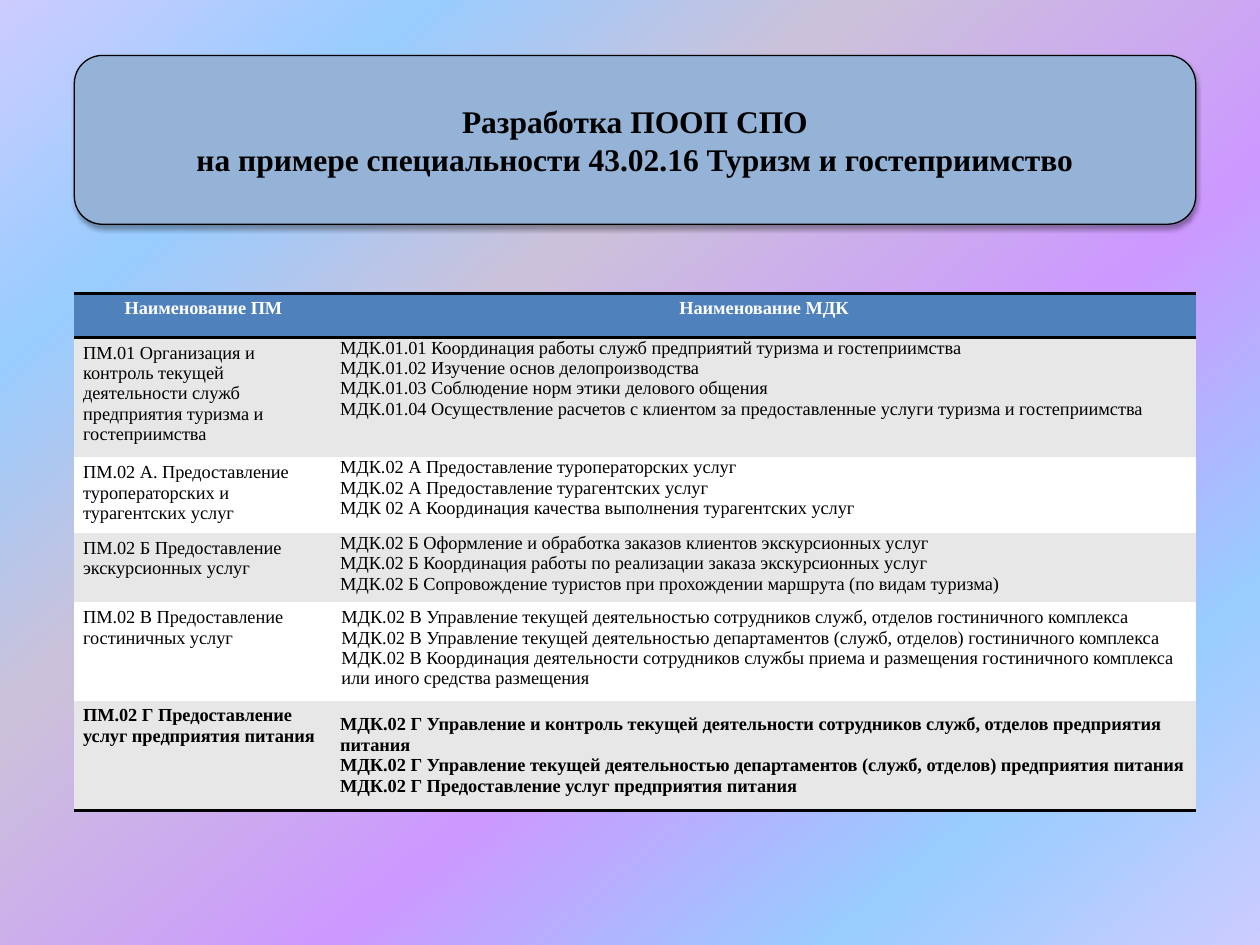
from dataclasses import dataclass

from lxml import etree
from pptx import Presentation
from pptx.dml.color import RGBColor
from pptx.enum import shapes, text
from pptx.oxml import ns, parse_xml
from pptx.util import Inches, Pt


@dataclass(frozen=True)
class Theme:
    font: str = "Times New Roman"
    title: float = 18
    body: float = 10.5
    ink: str = "000000"
    panel: str = "95B3D7"
    head: str = "4F81BD"
    band: str = "E7E7E7"
    white: str = "FFFFFF"
    wash: tuple = ((0, "CCCCFF"), (18, "99CCFF"), (36, "CCC1DA"),
                   (61, "CC99FF"), (82, "99CCFF"), (100, "CCCCFF"))


THEME = Theme()
NO_STYLE = "{2D5ABB26-0587-4C30-8999-92F81FD0307C}"
WIDE, FLAT = (0.07, 0.04), (0.06, 0)  # cell insets: side, top and bottom

TITLE = "Разработка ПООП СПО\nна примере специальности 43.02.16 Туризм и гостеприимство"
HEADS = ("Наименование ПМ", "Наименование МДК")
COLS = (2.05, 6.85)
HEAD_H = 0.35
# Module, its courses, row height, inset of the courses
ROWS = [
    ("ПМ.01 Организация и контроль текущей деятельности служб предприятия туризма и гостеприимства",
     ["МДК.01.01 Координация работы служб предприятий туризма и гостеприимства",
      "МДК.01.02 Изучение основ делопроизводства",
      "МДК.01.03 Соблюдение норм этики делового общения",
      "МДК.01.04 Осуществление расчетов с клиентом за предоставленные услуги туризма и гостеприимства"],
     0.95, FLAT),
    ("ПМ.02 А. Предоставление туроператорских и турагентских услуг",
     ["МДК.02 А Предоставление туроператорских услуг",
      "МДК.02 А Предоставление турагентских услуг",
      "МДК 02 А Координация качества выполнения турагентских услуг"],
     0.6, FLAT),
    ("ПМ.02 Б Предоставление экскурсионных услуг",
     ["МДК.02 Б Оформление и обработка заказов клиентов экскурсионных услуг",
      "МДК.02 Б Координация работы по реализации заказа экскурсионных услуг",
      "МДК.02 Б Сопровождение туристов при прохождении маршрута (по видам туризма)"],
     0.55, FLAT),
    ("ПМ.02 В Предоставление гостиничных услуг",
     ["МДК.02 В Управление текущей деятельностью сотрудников служб, отделов гостиничного комплекса",
      "МДК.02 В Управление текущей деятельностью департаментов (служб, отделов) гостиничного комплекса",
      "МДК.02 В Координация деятельности сотрудников службы приема и размещения гостиничного комплекса "
      "или иного средства размещения"],
     0.78, WIDE),
    ("ПМ.02 Г Предоставление услуг предприятия питания",
     ["МДК.02 Г Управление и контроль текущей деятельности сотрудников служб, отделов предприятия питания",
      "МДК.02 Г Управление текущей деятельностью департаментов (служб, отделов) предприятия питания",
      "МДК.02 Г Предоставление услуг предприятия питания"],
     0.87, FLAT),
]


def rgb(code):
    return RGBColor.from_string(code)


def style(frame, size, color, bold, align):
    for par in frame.paragraphs:
        par.alignment = align
        for run in par.runs:
            font = run.font
            font.name, font.size, font.bold = THEME.font, Pt(size), bold
            font.color.rgb = rgb(color)


def paint_back(slide):
    fill = slide.background.fill
    fill.gradient()
    fill.gradient_angle = 310  # counted anticlockwise
    stops = slide.element.find(".//" + ns.qn("a:gsLst"))
    for old in list(stops):
        stops.remove(old)
    for pos, code in THEME.wash:
        stop = etree.SubElement(stops, ns.qn("a:gs"), pos=str(pos * 1000))
        etree.SubElement(stop, ns.qn("a:srgbClr"), val=code)


def add_title(slide, box):
    # Rounded panel with a soft shadow
    panel = slide.shapes.add_shape(shapes.MSO_SHAPE.ROUNDED_RECTANGLE, *box)
    panel.fill.solid()
    panel.fill.fore_color.rgb = rgb(THEME.panel)
    panel.line.color.rgb = rgb(THEME.ink)
    panel.line.width = Pt(0.75)
    panel.element.spPr.append(parse_xml(
        f'<a:effectLst {ns.nsdecls("a")}><a:outerShdw blurRad="{Pt(3.1)}" dist="{Pt(1.8)}" '
        f'dir="5400000" rotWithShape="0"><a:srgbClr val="{THEME.ink}"><a:alpha val="35000"/>'
        '</a:srgbClr></a:outerShdw></a:effectLst>'))

    # Title placeholder, brought in front of the panel
    title = slide.shapes.title
    title.left, title.top, title.width, title.height = box
    panel.element.addnext(title.element)
    frame = title.text_frame
    frame.text = TITLE
    frame.word_wrap = True
    frame.auto_size = text.MSO_AUTO_SIZE.NONE
    frame.vertical_anchor = text.MSO_ANCHOR.MIDDLE
    style(frame, THEME.title, THEME.ink, True, text.PP_ALIGN.CENTER)


def rule(cell, sides):
    props = cell._tc.get_or_add_tcPr()
    for spot, side in enumerate(sides):
        props.insert(spot, parse_xml(
            f'<a:ln{side} {ns.nsdecls("a")} w="{Pt(2)}"><a:solidFill>'
            f'<a:srgbClr val="{THEME.ink}"/></a:solidFill></a:ln{side}>'))


def fill_cell(cell, words, back, inset, color=THEME.ink, bold=False,
              align=text.PP_ALIGN.LEFT):
    side, edge = inset
    cell.margin_left = cell.margin_right = Inches(side)
    cell.margin_top = cell.margin_bottom = Inches(edge)
    cell.fill.solid()
    cell.fill.fore_color.rgb = rgb(back)
    cell.text_frame.text = words
    style(cell.text_frame, THEME.body, color, bold, align)


def add_grid(slide, box):
    grid = slide.shapes.add_table(len(ROWS) + 1, len(COLS), *box).table
    grid.horz_banding = grid.first_row = False
    grid._tbl.tblPr.find(ns.qn("a:tableStyleId")).text = NO_STYLE
    for col, width in zip(grid.columns, COLS):
        col.width = Inches(width)

    # Header row
    grid.rows[0].height = Inches(HEAD_H)
    for cell, words in zip(grid.rows[0].cells, HEADS):
        fill_cell(cell, words, THEME.head, WIDE, THEME.white, True, text.PP_ALIGN.CENTER)
        rule(cell, "TB")

    # Banded rows; the last is bold and closed by a rule
    for num, (module, courses, height, inset) in enumerate(ROWS, 1):
        row = grid.rows[num]
        row.height = Inches(height)
        back = THEME.band if num % 2 else THEME.white
        last = num == len(ROWS)
        left, right = row.cells
        fill_cell(left, module, back, WIDE, bold=last)
        fill_cell(right, "\n".join(courses), back, inset, bold=last)
        if last:
            right.vertical_anchor = text.MSO_ANCHOR.MIDDLE
            for cell in (left, right):
                rule(cell, "B")


def main():
    deck = Presentation()
    deck.slide_width, deck.slide_height = Inches(10), Inches(7.5)
    slide = deck.slides.add_slide(deck.slide_layouts.get_by_name("Title Only"))
    paint_back(slide)
    left, width = Inches(0.59), Inches(sum(COLS))
    add_title(slide, (left, Inches(0.44), width, Inches(1.34)))
    add_grid(slide, (left, Inches(2.33), width, Inches(4.1)))
    deck.save("out.pptx")


if __name__ == "__main__":
    main()
